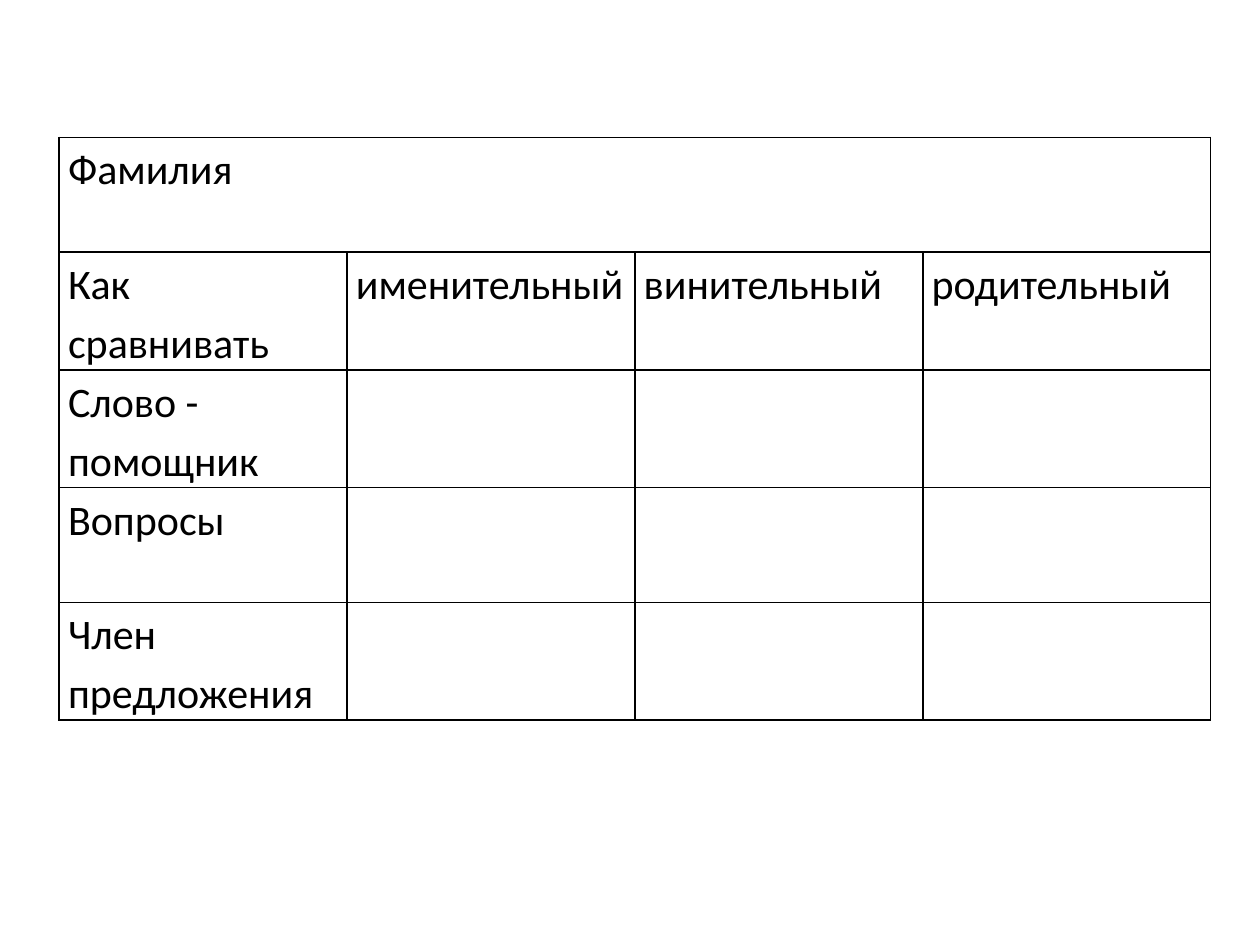
from dataclasses import dataclass

from lxml.etree import SubElement
from pptx import Presentation
from pptx.dml.color import RGBColor as Rgb
from pptx.oxml.ns import qn
from pptx.util import Inches, Pt


@dataclass(frozen=True)
class Theme:
    """Colours, type and line sizes of the worksheet."""
    ink: str = "000000"
    paper: str = "FFFFFF"
    font: str = "Calibri"
    size: int = 24
    spacing: float = 1.15
    border: int = 1
    inset: float = 0.07


class Worksheet:
    """Draws styled elements on the current page, placed by shares of its size."""

    def __init__(self, deck, theme):
        self.deck = deck
        self.theme = theme
        self.page = deck.slides.add_slide(deck.slide_layouts[6])

    def table(self, rows, left, top, width, height):
        """Adds an evenly divided table; a one-item row spans all columns."""
        columns = max(len(row) for row in rows)
        page_width, page_height = self.deck.slide_width, self.deck.slide_height
        frame = self.page.shapes.add_table(
            len(rows), columns, int(left * page_width), int(top * page_height),
            int(width * page_width), int(height * page_height))
        grid = frame.table
        grid.first_row = grid.horz_banding = False
        for index, row in enumerate(rows):
            if len(row) == 1:
                grid.cell(index, 0).merge(grid.cell(index, columns - 1))
            for column in range(columns):
                text = row[column] if column < len(row) else ""
                self.cell(grid.cell(index, column), text)

    def cell(self, box, text):
        """Fills, borders and letters one table cell."""
        theme = self.theme
        box.fill.solid()
        box.fill.fore_color.rgb = Rgb.from_string(theme.paper)
        box.margin_left = box.margin_right = Inches(theme.inset)
        box.margin_top = box.margin_bottom = 0
        self.borders(box)
        box.text_frame.text = text
        para = box.text_frame.paragraphs[0]
        para.line_spacing = theme.spacing
        for span in para.runs:
            span.font.name = theme.font
            span.font.size = Pt(theme.size)
            span.font.color.rgb = Rgb.from_string(theme.ink)

    def borders(self, box):
        """Puts a solid line on each side of a cell, ahead of its fill."""
        properties = box._tc.get_or_add_tcPr()
        for place, side in enumerate(("lnL", "lnR", "lnT", "lnB")):
            line = SubElement(properties, qn(f"a:{side}"), w=str(Pt(self.theme.border)))
            solid = SubElement(line, qn("a:solidFill"))
            SubElement(solid, qn("a:srgbClr"), val=self.theme.ink)
            properties.insert(place, line)


def main():
    """Builds the case comparison worksheet."""
    deck = Presentation()
    deck.slide_width, deck.slide_height = Inches(10), Inches(7.5)
    sheet = Worksheet(deck, Theme())
    blanks = [""] * 3
    rows = [
        ["Фамилия"],
        ["Как сравнивать", "именительный", "винительный", "родительный"],
        ["Слово - помощник", *blanks],
        ["Вопросы", *blanks],
        ["Член предложения", *blanks],
    ]
    sheet.table(rows, left=0.047, top=1.09 / 7.5, width=0.914, height=4.55 / 7.5)
    deck.save("out.pptx")


if __name__ == "__main__":
    main()
